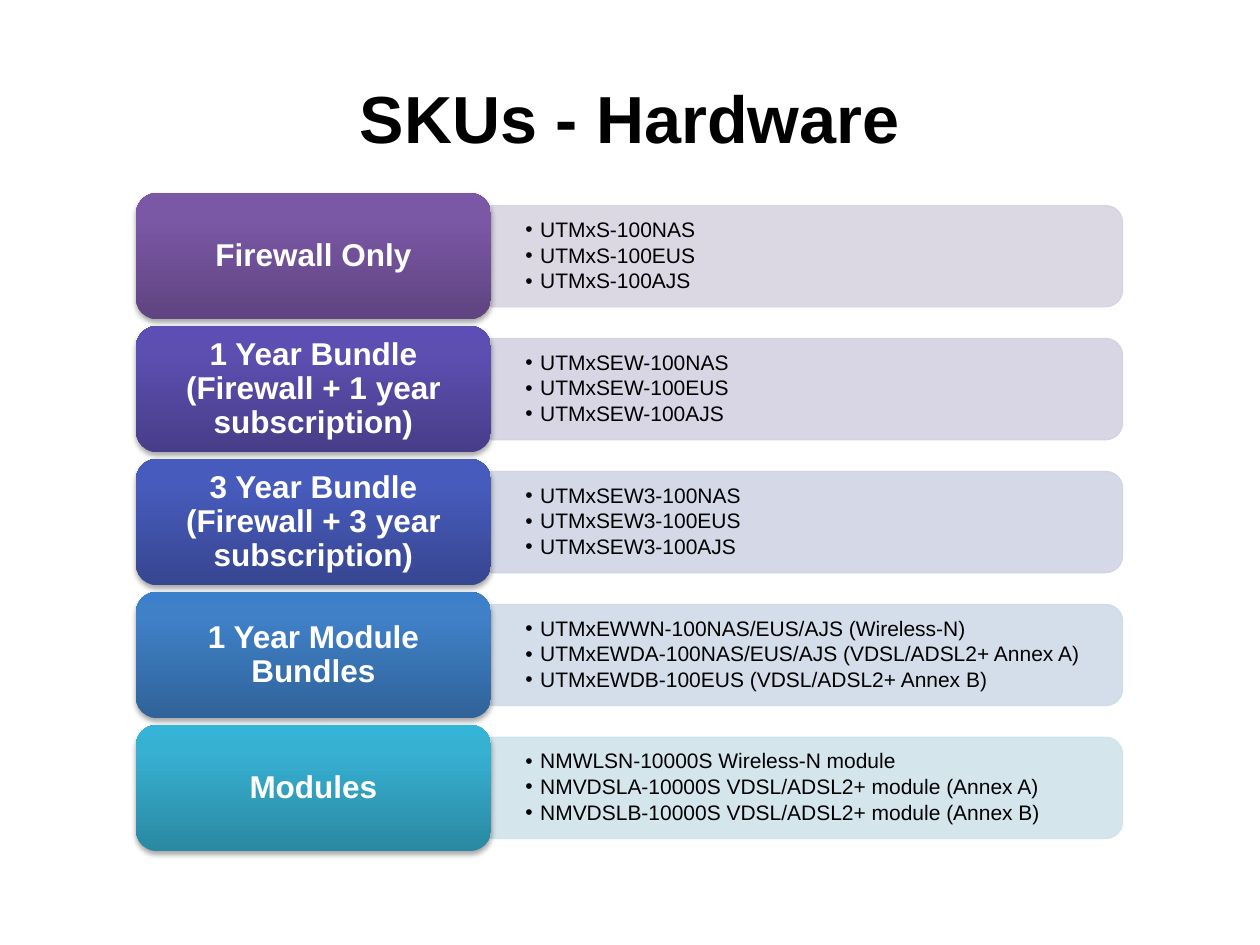
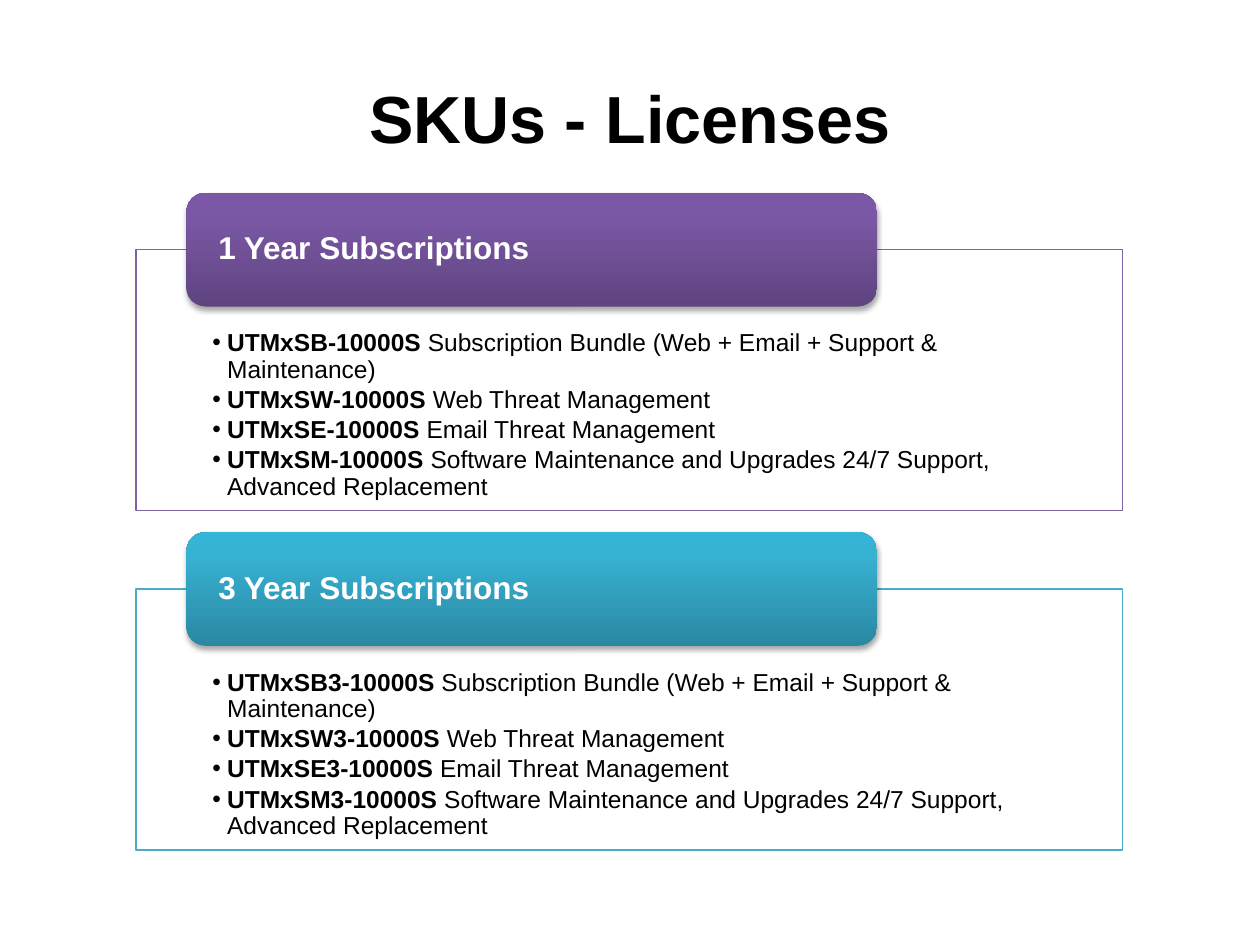
import pptx
import pptx.dml.color
import pptx.enum.shapes
import pptx.enum.text
import pptx.oxml
import pptx.oxml.ns
import pptx.util
from lxml import etree

Cm = pptx.util.Cm
Pt = pptx.util.Pt
qn = pptx.oxml.ns.qn
KINDS = pptx.enum.shapes.MSO_SHAPE
ALIGN = pptx.enum.text.PP_ALIGN
ANCHOR = pptx.enum.text.MSO_ANCHOR

FONT = "Arial"
COLORS = {
    "ink": "000000", "paper": "FFFFFF",
    "purple": "8064A2", "teal": "4BACC6",
    "lilac tint": "D8D3E0", "violet tint": "D4D2E3", "indigo tint": "D1D4E5",
    "blue tint": "D0DBE8", "teal tint": "D0E3EA",
}
# Colours at 0, 80 and 100 percent, from the bottom edge up
FADES = {
    "lilac": ("5F4480", "7B58A6", "7C57A8"),
    "violet": ("483D89", "5D4FB1", "5C4EB4"),
    "indigo": ("374691", "475BBC", "455ABF"),
    "blue": ("306399", "3F80C7", "3C80CB"),
    "teal": ("2A88A2", "37B1D2", "34B4D6"),
}
LEFT, TOP = 2.74, 3.89
ZONES = ("NAS", "EUS", "AJS")


def zoned(stem):
    return [f"{stem}-100{zone}" for zone in ZONES]


HARDWARE = [
    ("Firewall Only", "lilac", zoned("UTMxS")),
    ("1 Year Bundle (Firewall + 1 year subscription)", "violet", zoned("UTMxSEW")),
    ("3 Year Bundle (Firewall + 3 year subscription)", "indigo", zoned("UTMxSEW3")),
    ("1 Year Module Bundles", "blue", [
        "UTMxEWWN-100NAS/EUS/AJS (Wireless-N)",
        "UTMxEWDA-100NAS/EUS/AJS (VDSL/ADSL2+ Annex A)",
        "UTMxEWDB-100EUS (VDSL/ADSL2+ Annex B)"]),
    ("Modules", "teal", [
        "NMWLSN-10000S Wireless-N module",
        "NMVDSLA-10000S VDSL/ADSL2+ module (Annex A)",
        "NMVDSLB-10000S VDSL/ADSL2+ module (Annex B)"]),
]
LICENSES = [
    ("1 Year Subscriptions", "lilac", "purple", ""),
    ("3 Year Subscriptions", "teal", "teal", "3"),
]
TERMS = {
    "B": "Subscription Bundle (Web + Email + Support & Maintenance)",
    "W": "Web Threat Management",
    "E": "Email Threat Management",
    "M": "Software Maintenance and Upgrades 24/7 Support, Advanced Replacement",
}


def rgb(name):
    return pptx.dml.color.RGBColor.from_string(COLORS[name])


def style(run, size, color="ink", bold=False):
    run.font.name = FONT
    run.font.size = Pt(size)
    run.font.bold = bold
    run.font.color.rgb = rgb(color)


def set_frame(shape, anchor, left, top, bottom=None):
    """Wrap the text and set its margins; the sides match, bottom defaults to top."""
    frame = shape.text_frame
    frame.word_wrap = True
    frame.vertical_anchor = anchor
    frame.margin_left = frame.margin_right = Cm(left)
    frame.margin_top = Cm(top)
    frame.margin_bottom = Cm(top if bottom is None else bottom)
    return frame


def add_box(slide, x, y, wide, high):
    return slide.shapes.add_textbox(Cm(x), Cm(y), Cm(wide), Cm(high))


def add_shape(slide, kind, x, y, wide, high):
    shape = slide.shapes.add_shape(kind, Cm(x), Cm(y), Cm(wide), Cm(high))
    shape.shadow.inherit = False
    return shape


def add_title(slide, text):
    frame = set_frame(add_box(slide, 1.27, 0.76, 22.86, 3.18), ANCHOR.MIDDLE, 0.25, 0.13)
    frame.text = text
    frame.paragraphs[0].alignment = ALIGN.CENTER
    style(frame.paragraphs[0].runs[0], 38, bold=True)


def paint(shape, fill, line):
    """Give a solid fill at 90 percent opacity and a thin line."""
    shape.fill.solid()
    shape.fill.fore_color.rgb = rgb(fill)
    tone = shape._element.spPr.find(qn("a:solidFill"))[0]
    etree.SubElement(tone, qn("a:alpha"), val="90000")
    shape.line.color.rgb = rgb(line)
    shape.line.width = Pt(0.75)


def fade(shape, tones):
    shape.fill.gradient()
    shape.fill.gradient_angle = 90
    stops = shape._element.spPr.find(qn("a:gradFill")).find(qn("a:gsLst"))
    for stop in list(stops):
        stops.remove(stop)
    for place, tone in zip((0, 80, 100), tones):
        stop = etree.SubElement(stops, qn("a:gs"), pos=str(place * 1000))
        etree.SubElement(stop, qn("a:srgbClr"), val=tone)


def add_shade(shape):
    """Add a soft shadow below the shape."""
    effects = shape._element.spPr.find(qn("a:effectLst"))
    shade = etree.SubElement(effects, qn("a:outerShdw"), blurRad=str(Pt(3.1)),
                             dist=str(Pt(1.8)), dir="5400000", rotWithShape="0")
    tone = etree.SubElement(shade, qn("a:srgbClr"), val=COLORS["ink"])
    etree.SubElement(tone, qn("a:alpha"), val="35000")


def add_head(slide, text, tones, x, y, wide, high, align, inset):
    head = add_shape(slide, KINDS.ROUNDED_RECTANGLE, x, y, wide, high)
    fade(head, tones)
    head.line.fill.background()
    add_shade(head)
    frame = set_frame(head, ANCHOR.MIDDLE, *inset)
    frame.text = text
    para = frame.paragraphs[0]
    para.alignment = align
    para.line_spacing = 0.9
    style(para.runs[0], 18, "paper", True)


def add_list(frame, items, size, bold_code=False):
    """Write bullets; with bold_code the first word of each is bold."""
    for i, item in enumerate(items):
        para = frame.paragraphs[0] if i == 0 else frame.add_paragraph()
        para.alignment = ALIGN.LEFT
        para.level = 1
        para.line_spacing = 0.9
        props = para._p.get_or_add_pPr()
        props.set("marL", str(Cm(0.3)))
        props.set("indent", str(Cm(-0.3)))
        after = etree.SubElement(props, qn("a:spcAft"))
        etree.SubElement(after, qn("a:spcPct"), val="15000")
        etree.SubElement(props, qn("a:buFont"), typeface=FONT)
        etree.SubElement(props, qn("a:buChar"), char="•")
        if bold_code:
            code, gap, rest = item.partition(" ")
            para.text = code
            para.add_run().text = gap + rest
        else:
            para.text = item
        for j, run in enumerate(para.runs):
            style(run, size, bold=bold_code and j == 0)


def add_panel(slide, tint, x, mid, wide, high):
    """Add a panel with round right corners, centred on the height mid."""
    panel = add_shape(slide, KINDS.ROUND_2_SAME_RECTANGLE,
                      x + (wide - high) / 2, mid - wide / 2, high, wide)
    panel.rotation = 90
    paint(panel, tint, tint)


def add_row(slide, y, name, hue, items):
    wide, high, text_high = 7.16, 2.55, 1.83
    edge, mid = LEFT + wide, y + high / 2
    add_panel(slide, f"{hue} tint", edge, mid, 12.73, 2.04)
    box = add_box(slide, edge, mid - text_high / 2, 12.62, text_high)
    add_list(set_frame(box, ANCHOR.MIDDLE, 0.69, 0.34), items, 12)
    add_head(slide, name, FADES[hue], LEFT, y, wide, high, ALIGN.CENTER, (0.18, 0.1))


def add_group(slide, y, name, hue, line, mark):
    high = 2.29
    box = add_shape(slide, KINDS.RECTANGLE, LEFT, y + high / 2, 19.89, 5.26)
    paint(box, "paper", line)
    items = [f"UTMxS{key}{mark}-10000S {term}" for key, term in TERMS.items()]
    add_list(set_frame(box, ANCHOR.TOP, 1.54, 1.63, 0.27), items, 14, bold_code=True)
    add_head(slide, name, FADES[hue], 3.76, y, 13.92, high, ALIGN.LEFT, (0.53, 0))


def main():
    deck = pptx.Presentation()
    deck.slide_width, deck.slide_height = Cm(25.4), Cm(19.05)
    pages = [
        ("SKUs - Hardware", add_row, HARDWARE, 2.68),
        ("SKUs - Licenses", add_group, LICENSES, 6.84),
    ]
    for title, add_part, parts, pitch in pages:
        slide = deck.slides.add_slide(deck.slide_layouts[6])
        add_title(slide, title)
        for i, part in enumerate(parts):
            add_part(slide, TOP + i * pitch, *part)
    deck.save("out.pptx")


if __name__ == "__main__":
    main()
